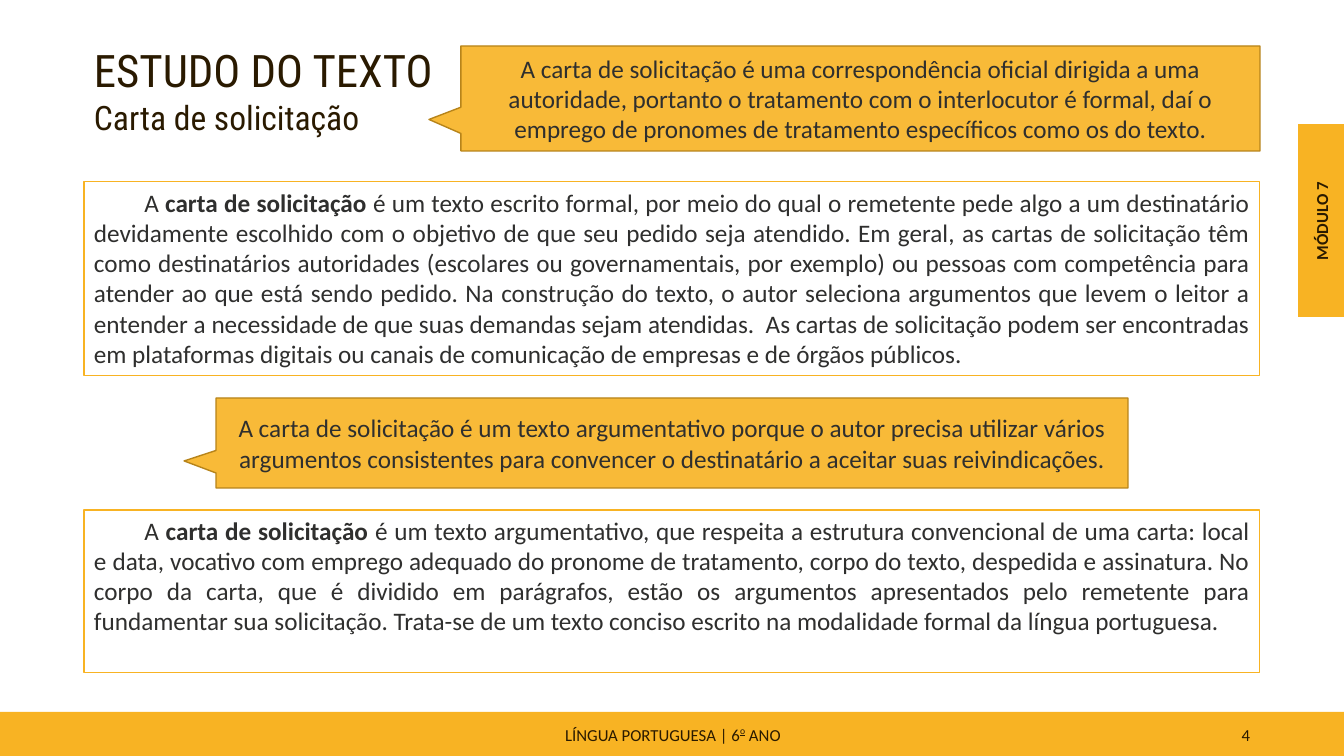
import pptx
import pptx.util
import pptx.dml.color
import pptx.enum.shapes
import pptx.enum.text
import pptx.oxml.ns
import lxml.etree

PX = 914400 / 100.8
COLORS = {"amber": "F8B323", "ochre": "B7841A", "brown": "2A1A00", "gray": "2F2F2E"}
ALIGN = pptx.enum.text.PP_ALIGN
ANCHOR = pptx.enum.text.MSO_ANCHOR
SHAPE = pptx.enum.shapes.MSO_SHAPE


def add_box(x, y, w, h, kind=SHAPE.RECTANGLE, fill=None, line=None, weight=1):
    sp = s.shapes.add_shape(kind, *[round(v * PX) for v in (x, y, w, h)])
    sp.shadow.inherit = False
    for fmt, color in ((sp.fill, fill), (sp.line.fill, line)):
        if color:
            fmt.solid()
            fmt.fore_color.rgb = pptx.dml.color.RGBColor.from_string(COLORS[color])
        else:
            fmt.background()
    if line:
        sp.line.width = pptx.util.Pt(weight)
    return sp


def write(sp, *runs, size=18, font="Calibri", color="gray", bold=False, align=ALIGN.LEFT,
          anchor=ANCHOR.TOP, indent=0, after=0, new=False):
    """Each run is a string or a (string, style) pair; style is "bold" or "super"."""
    tf = sp.text_frame
    tf.word_wrap = True
    tf.vertical_anchor = anchor
    p = tf.add_paragraph() if new else tf.paragraphs[0]
    p.alignment = align
    p.space_after = pptx.util.Pt(after)
    if indent:
        p._p.get_or_add_pPr().set("indent", str(pptx.util.Inches(indent)))
    for run in runs:
        text, style = (run, "") if isinstance(run, str) else run
        r = p.add_run()
        r.text = text
        r.font.size = pptx.util.Pt(size)
        r.font.name = font
        r.font.bold = bold or style == "bold"
        r.font.color.rgb = pptx.dml.color.RGBColor.from_string(COLORS[color])
        if style == "super":
            r.font.underline = True
            r._r.get_or_add_rPr().set("baseline", "45000")


prs = pptx.Presentation()
prs.slide_width = round(1344 * PX)
prs.slide_height = round(756 * PX)
s = prs.slides.add_slide(prs.slide_layouts[6])

# Footer band with subject and slide number
add_box(0, 712, 1344, 44, fill="amber")
footers = [
    (446, 454, ALIGN.CENTER, ["LÍNGUA PORTUGUESA | 6", ("o", "super"), " ANO"]),
    (950, 310, ALIGN.RIGHT, ["4"]),
]
for x, w, align, runs in footers:
    sp = s.shapes.add_textbox(*[round(v * PX) for v in (x, 716, w, 38)])
    write(sp, *runs, size=12, color="brown", align=align, anchor=ANCHOR.MIDDLE, after=6)

# Module tab on the right edge
add_box(1298, 124, 46, 193, fill="amber")
sp = s.shapes.add_textbox(*[round(v * PX) for v in (1225, 206, 193, 30)])
sp.rotation = 270
write(sp, "MÓDULO 7", size=12, color="brown", bold=True, align=ALIGN.CENTER)

# Title
sp = s.shapes.add_textbox(*[round(v * PX) for v in (84, 38, 361, 105)])
write(sp, "ESTUDO DO TEXTO", size=32, font="Roboto Condensed", color="brown")
write(sp, "Carta de solicitação", size=24, font="Roboto Condensed", color="brown", new=True)

# Outlined explanations
explanations = [
    (182, 194, "é um texto escrito formal, por meio do qual o remetente pede algo a um destinatário "
     "devidamente escolhido com o objetivo de que seu pedido seja atendido. Em geral, as cartas de "
     "solicitação têm como destinatários autoridades (escolares ou governamentais, por exemplo) ou "
     "pessoas com competência para atender ao que está sendo pedido. Na construção do texto, o autor "
     "seleciona argumentos que levem o leitor a entender a necessidade de que suas demandas sejam "
     "atendidas.  As cartas de solicitação podem ser encontradas em plataformas digitais ou canais de "
     "comunicação de empresas e de órgãos públicos."),
    (510, 163, "é um texto argumentativo, que respeita a estrutura convencional de uma carta: local e "
     "data, vocativo com emprego adequado do pronome de tratamento, corpo do texto, despedida e "
     "assinatura. No corpo da carta, que é dividido em parágrafos, estão os argumentos apresentados "
     "pelo remetente para fundamentar sua solicitação. Trata-se de um texto conciso escrito na "
     "modalidade formal da língua portuguesa."),
]
for y, h, text in explanations:
    sp = add_box(84, y, 1176, h, line="amber", weight=0.75)
    write(sp, "A ", ("carta de solicitação ", "bold"), text, align=ALIGN.JUSTIFY, indent=0.5)

# Callouts, slightly transparent
callouts = [
    (461, 46, 799, 105, -0.54, "A carta de solicitação é uma correspondência oficial dirigida a uma "
     "autoridade, portanto o tratamento com o interlocutor é formal, daí o emprego de pronomes de "
     "tratamento específicos como os do texto."),
    (216, 398, 912, 90, -0.535, "A carta de solicitação é um texto argumentativo porque o autor precisa "
     "utilizar vários argumentos consistentes para convencer o destinatário a aceitar suas "
     "reivindicações."),
]
for x, y, w, h, tip, text in callouts:
    sp = add_box(x, y, w, h, kind=SHAPE.RECTANGULAR_CALLOUT, fill="amber", line="ochre")
    sp.adjustments[0] = tip
    sp.adjustments[1] = 0.2
    color = sp._element.spPr.find(pptx.oxml.ns.qn("a:solidFill"))[0]
    lxml.etree.SubElement(color, pptx.oxml.ns.qn("a:alpha"), val="90000")
    write(sp, text, align=ALIGN.CENTER, anchor=ANCHOR.MIDDLE)

prs.save("out.pptx")
